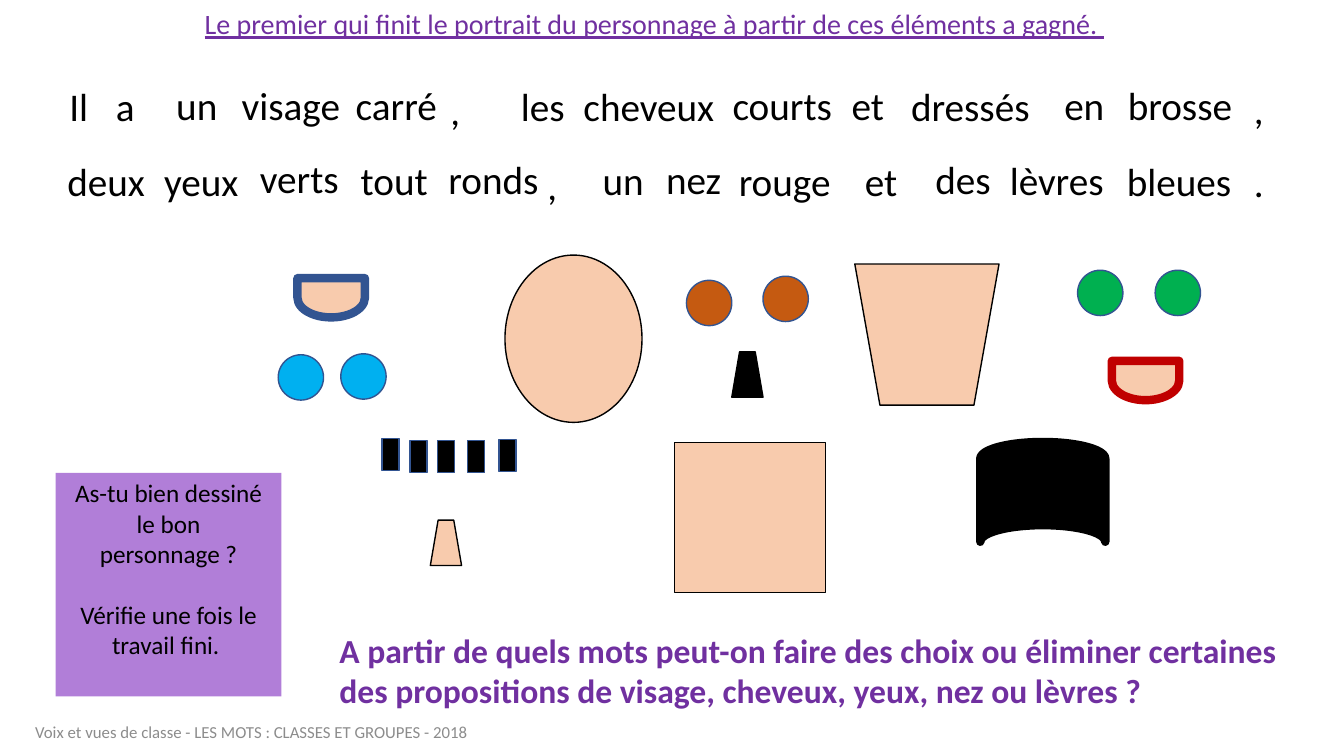
from dataclasses import dataclass
from typing import NamedTuple, Optional

from pptx import Presentation
from pptx.dml.color import RGBColor
from pptx.enum import shapes, text
from pptx.util import Pt

FONT = "Calibri"
BLACK = RGBColor(0x00, 0x00, 0x00)
PURPLE = RGBColor(0x70, 0x30, 0xA0)
LILAC = RGBColor(0xB1, 0x7E, 0xD8)
GREY = RGBColor(0x8C, 0x8C, 0x8C)
SKIN = RGBColor(0xF8, 0xCB, 0xAD)
NAVY = RGBColor(0x32, 0x54, 0x91)
GREEN = RGBColor(0x00, 0xB0, 0x50)
BLUE = RGBColor(0x00, 0xB0, 0xF0)
BROWN = RGBColor(0xC5, 0x5A, 0x11)
RED = RGBColor(0xC0, 0x00, 0x00)

KIND = shapes.MSO_SHAPE
EYE = 32.4
LOCK_WIDTH, LOCK_HEIGHT = 12.2, 23
WORD_HEIGHT = 41


class Word(NamedTuple):
    left: float
    top: float
    width: float
    wording: str


@dataclass(frozen=True)
class Part:
    kind: KIND
    left: float
    top: float
    width: float
    height: float
    fill: RGBColor
    line: Optional[RGBColor] = BLACK
    weight: float = 1
    rotation: float = 0
    adjustment: Optional[float] = None


@dataclass(frozen=True)
class Label:
    left: float
    top: float
    width: float
    height: float
    wording: str
    size: float
    color: RGBColor = BLACK
    bold: bool = False
    underline: bool = False
    align: text.PP_ALIGN = text.PP_ALIGN.LEFT
    anchor: text.MSO_ANCHOR = text.MSO_ANCHOR.TOP


# Words of the description, in reading order
WORDS = [
    Word(42.5, 55.4, 29, "Il"), Word(75.6, 55.4, 32.4, "a"),
    Word(118.8, 54.7, 46.8, "un"), Word(165.6, 54.7, 97.9, "visage"),
    Word(247, 54.7, 74.9, "carré"), Word(314.6, 58.3, 41, ","),
    Word(365, 55.4, 49.7, "les"), Word(409.7, 55.4, 109.4, "cheveux"),
    Word(516.2, 54.7, 88.6, "courts"), Word(601.2, 54.7, 38.9, "et"),
    Word(643.7, 55.4, 103.7, "dressés"), Word(753.1, 54.7, 43.9, "en"),
    Word(798.5, 54.7, 90, "brosse"), Word(888.5, 57.6, 38.2, ","),
    Word(41, 108.7, 70.6, "deux"), Word(110.2, 108.7, 70.6, "yeux"),
    Word(178.6, 106.6, 74.9, "verts"), Word(250.6, 108, 69.8, "tout"),
    Word(313.2, 107.3, 80.6, "ronds"), Word(383.8, 111.6, 49.7, ","),
    Word(423.4, 108, 48.2, "un"), Word(468.7, 107.3, 60.5, "nez"),
    Word(520.6, 108.7, 80.6, "rouge"), Word(610.6, 108.7, 51.1, "et"),
    Word(661, 107.3, 61.2, "des"), Word(714.2, 108, 85.7, "lèvres"),
    Word(797.8, 108.7, 90, "bleues"), Word(888.5, 109.4, 22.3, "."),
]

# Left, top and colour of each eye
EYES = [
    (769.7, 193, GREEN), (825.1, 193, GREEN),
    (198.7, 253.4, BLUE), (243.4, 252.7, BLUE),
    (490.3, 200.2, BROWN), (545, 197.3, BROWN),
]

# Left and top of each brush-cut lock
LOCKS = [(272.9, 313.2), (293, 314.6), (312.5, 314.6), (334.1, 314.6), (356.4, 313.9)]

MOUTHS = [(222.5, 188.6, NAVY), (804.2, 247.7, RED)]
NOSES = [(307.4, 371.5, SKIN), (522.7, 251.3, BLACK)]

FACES = [
    Part(KIND.OVAL, 360.7, 182.2, 97.9, 119.5, SKIN),
    Part(KIND.RECTANGLE, 481.7, 316.1, 108, 107.3, SKIN),
    Part(KIND.TRAPEZOID, 610.6, 188.6, 103, 100.8, SKIN, rotation=180, adjustment=0.178),
]
LONG_HAIR = Part(KIND.FLOWCHART_STORED_DATA, 709.2, 306.7, 71.3, 89.3, BLACK, weight=6, rotation=90)
REMINDER = Part(KIND.RECTANGLE, 39.8, 337.7, 161.3, 159.8, LILAC, line=None)
REMINDER_LINES = ["As-tu bien dessiné le bon personnage ?", "Vérifie une fois le travail fini. "]

TITLE = Label(139, 1.4, 658, 31.7,
              "Le premier qui finit le portrait du personnage à partir de ces éléments a gagné. ",
              20, PURPLE, underline=True)
QUESTION = Label(235.4, 446.4, 692, 65.5,
                 "A partir de quels mots peut-on faire des choix ou éliminer certaines "
                 "des propositions de visage, cheveux, yeux, nez ou lèvres ?",
                 24, PURPLE, bold=True)
FOOTER = Label(0, 508.3, 359.3, 28.8,
               "Voix et vues de classe - LES MOTS : CLASSES ET GROUPES - 2018",
               12, GREY, align=text.PP_ALIGN.CENTER, anchor=text.MSO_ANCHOR.MIDDLE)


def set_font(paragraph, size: float, color: RGBColor) -> None:
    paragraph.font.name = FONT
    paragraph.font.size = Pt(size)
    paragraph.font.color.rgb = color


def add_label(page, label: Label) -> None:
    box = page.shapes.add_textbox(Pt(label.left), Pt(label.top), Pt(label.width), Pt(label.height))
    frame = box.text_frame
    frame.word_wrap = True
    frame.vertical_anchor = label.anchor
    para = frame.paragraphs[0]
    para.text = label.wording
    para.alignment = label.align
    set_font(para, label.size, label.color)
    para.font.bold = label.bold
    para.font.underline = label.underline


def add_part(page, part: Part):
    shape = page.shapes.add_shape(part.kind, Pt(part.left), Pt(part.top), Pt(part.width), Pt(part.height))
    shape.shadow.inherit = False
    shape.rotation = part.rotation
    if part.adjustment is not None:
        shape.adjustments[0] = part.adjustment
    shape.fill.solid()
    shape.fill.fore_color.rgb = part.fill
    if part.line is None:
        shape.line.fill.background()
    else:
        shape.line.color.rgb = part.line
        shape.line.width = Pt(part.weight)
    return shape


def add_reminder(page) -> None:
    frame = add_part(page, REMINDER).text_frame
    frame.word_wrap = True
    frame.vertical_anchor = text.MSO_ANCHOR.TOP
    for index, wording in enumerate(REMINDER_LINES):
        para = frame.add_paragraph() if index else frame.paragraphs[0]
        para.text = wording
        para.alignment = text.PP_ALIGN.CENTER
        para.space_before = Pt(22 * index)
        set_font(para, 18, BLACK)


def main() -> None:
    deck = Presentation()
    deck.slide_width, deck.slide_height = Pt(960), Pt(540)
    page = deck.slides.add_slide(deck.slide_layouts[6])

    # Title and description
    add_label(page, TITLE)
    for word in WORDS:
        add_label(page, Label(word.left, word.top, word.width, WORD_HEIGHT, word.wording, 28))

    # Portrait elements
    parts = list(FACES)
    parts += [Part(KIND.OVAL, left, top, EYE, EYE, color, NAVY) for left, top, color in EYES]
    parts += [Part(KIND.FLOWCHART_DELAY, left, top, 28.1, 48.2, SKIN, color, 6, 90)
              for left, top, color in MOUTHS]
    parts += [Part(KIND.TRAPEZOID, left, top, 22.3, 32.4, color) for left, top, color in NOSES]
    parts += [Part(KIND.RECTANGLE, left, top, LOCK_WIDTH, LOCK_HEIGHT, BLACK, NAVY) for left, top in LOCKS]
    for part in parts + [LONG_HAIR]:
        add_part(page, part)

    # Question, reminder and footer
    add_label(page, QUESTION)
    add_reminder(page)
    add_label(page, FOOTER)

    deck.save("out.pptx")


if __name__ == "__main__":
    main()
